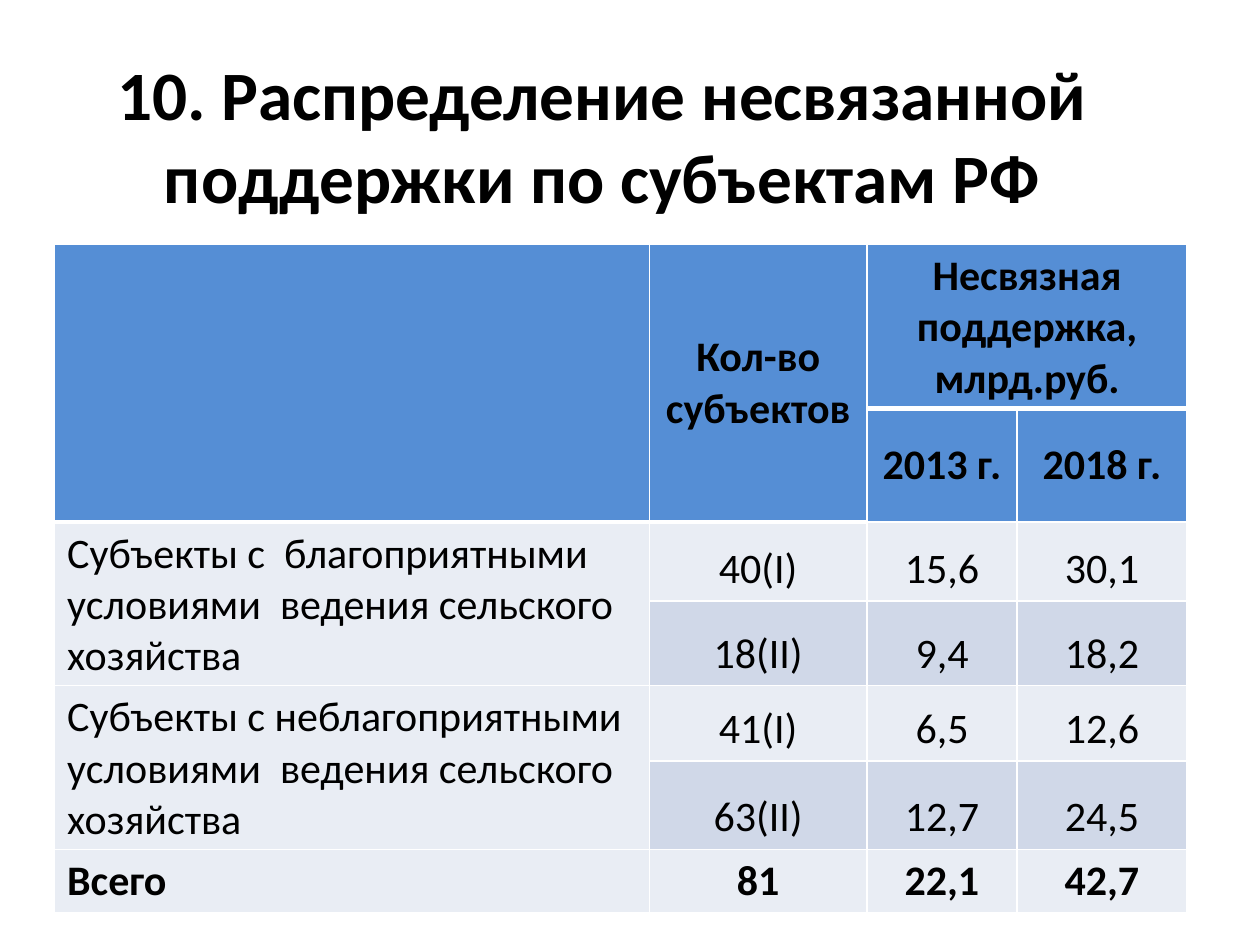
from dataclasses import dataclass

import lxml.etree
import pptx
import pptx.dml.color
import pptx.enum.text
import pptx.oxml.ns
import pptx.util

Cm = pptx.util.Cm
Align = pptx.enum.text.PP_ALIGN
Anchor = pptx.enum.text.MSO_ANCHOR
RGBColor = pptx.dml.color.RGBColor

BLACK = RGBColor(0x00, 0x00, 0x00)
WHITE = RGBColor(0xFF, 0xFF, 0xFF)
HEADER_BLUE = RGBColor(0x55, 0x8E, 0xD5)
BAND_LIGHT = RGBColor(0xE9, 0xED, 0xF4)
BAND_DARK = RGBColor(0xD0, 0xD8, 0xE8)

COLUMN_WIDTHS = (11.99, 4.39, 3.02, 3.43)
ROW_HEIGHTS = (1.8, 1.09, 1.6, 1.6, 1.52, 1.6, 1.27)
HEADER_ROWS = 2
TOTAL_ROW = len(ROW_HEIGHTS) - 1

ROWS = (
    ("", "Кол-во субъектов", "Несвязная поддержка, млрд.руб.", ""),
    ("", "", "2013 г.", "2018 г."),
    ("Субъекты с  благоприятными  условиями  ведения сельского  хозяйства", "40(I)", "15,6", "30,1"),
    ("", "18(II)", "9,4", "18,2"),
    ("Субъекты с неблагоприятными  условиями  ведения сельского  хозяйства", "41(I)", "6,5", "12,6"),
    ("", "63(II)", "12,7", "24,5"),
    ("Всего", "81", "22,1", "42,7"),
)


@dataclass(frozen=True)
class Span:
    row: int
    column: int
    last_row: int
    last_column: int


SPANS = (
    Span(0, 0, 1, 0),
    Span(0, 1, 1, 1),
    Span(0, 2, 0, 3),
    Span(2, 0, 3, 0),
    Span(4, 0, 5, 0),
)


def write_text(text_frame, text: str, *, size: float, bold: bool = False,
               align=Align.CENTER, color: RGBColor = BLACK) -> None:
    text_frame.word_wrap = True
    paragraph = text_frame.paragraphs[0]
    paragraph.alignment = align
    run = paragraph.add_run()
    run.text = text
    run.font.name = "Calibri"
    run.font.size = pptx.util.Pt(size)
    run.font.bold = bold
    run.font.color.rgb = color


def set_borders(cell, *, top: float = 1, bottom: float = 1) -> None:
    properties = cell._tc.get_or_add_tcPr()
    for side, width in (("L", 1), ("R", 1), ("T", top), ("B", bottom)):
        line = lxml.etree.SubElement(properties, pptx.oxml.ns.qn(f"a:ln{side}"),
                                     w=str(pptx.util.Pt(width)))
        fill = lxml.etree.SubElement(line, pptx.oxml.ns.qn("a:solidFill"))
        lxml.etree.SubElement(fill, pptx.oxml.ns.qn("a:srgbClr"), val=str(WHITE))


def format_cell(cell, row: int, column: int, text: str) -> None:
    is_header = row < HEADER_ROWS
    set_borders(cell, top=3 if row == 1 else 1, bottom=3 if row == 0 else 1)
    cell.fill.solid()
    if is_header:
        cell.fill.fore_color.rgb = HEADER_BLUE
        cell.vertical_anchor = Anchor.MIDDLE
    else:
        cell.fill.fore_color.rgb = BAND_DARK if row % 2 else BAND_LIGHT
        cell.vertical_anchor = Anchor.BOTTOM if column else Anchor.TOP
    write_text(cell.text_frame, text, size=24, bold=is_header or row == TOTAL_ROW,
               align=Align.CENTER if is_header or column else Align.LEFT)


def add_title(slide) -> None:
    title = slide.shapes.add_textbox(Cm(0.71), Cm(1.12), Cm(22.86), Cm(3.18))
    title.text_frame.vertical_anchor = Anchor.MIDDLE
    write_text(title.text_frame, "10. Распределение несвязанной поддержки по субъектам РФ",
               size=39.6, bold=True)


def add_support_table(slide) -> None:
    table = slide.shapes.add_table(
        len(ROW_HEIGHTS), len(COLUMN_WIDTHS), Cm(1.1), Cm(4.93),
        Cm(sum(COLUMN_WIDTHS)), Cm(sum(ROW_HEIGHTS))).table
    table.first_row = False
    table.horz_banding = False
    for column, width in zip(table.columns, COLUMN_WIDTHS):
        column.width = Cm(width)
    for row, height in zip(table.rows, ROW_HEIGHTS):
        row.height = Cm(height)
    for span in SPANS:
        table.cell(span.row, span.column).merge(table.cell(span.last_row, span.last_column))
    for row, texts in enumerate(ROWS):
        for column, text in enumerate(texts):
            cell = table.cell(row, column)
            if not cell.is_spanned:
                format_cell(cell, row, column, text)


def main() -> None:
    presentation = pptx.Presentation()
    presentation.slide_width = Cm(25.4)
    presentation.slide_height = Cm(19.05)
    slide = presentation.slides.add_slide(presentation.slide_layouts[6])

    # Heading
    add_title(slide)
    # Support by group of regions
    add_support_table(slide)

    presentation.save("out.pptx")


if __name__ == "__main__":
    main()
